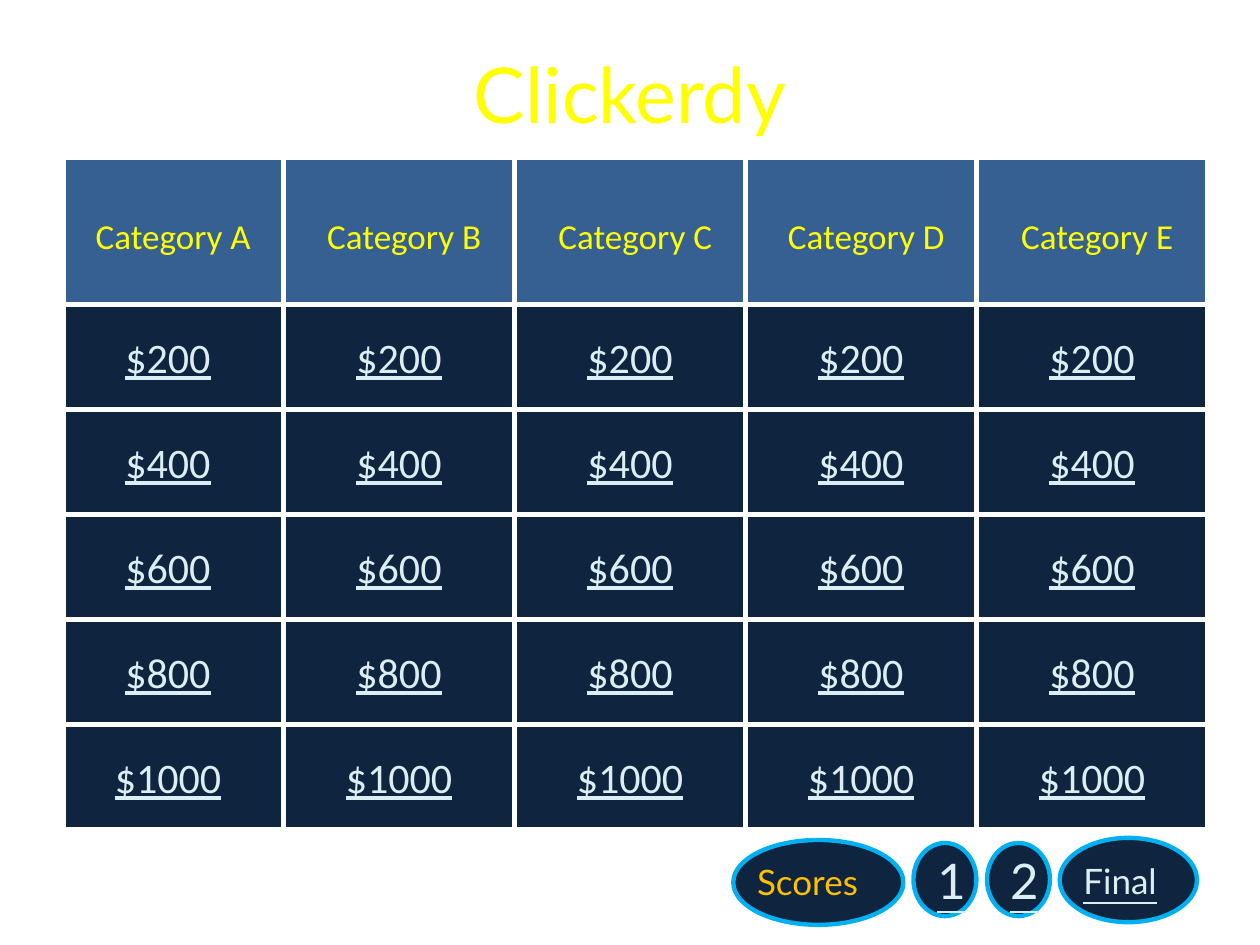
"""Build a quiz game board slide with five categories and score buttons."""
from lxml.etree import SubElement
from pptx import Presentation
from pptx.dml.color import RGBColor
from pptx.enum.shapes import MSO_CONNECTOR, MSO_SHAPE
from pptx.enum.text import MSO_ANCHOR, MSO_AUTO_SIZE, PP_ALIGN
from pptx.oxml.ns import qn
from pptx.util import Pt

NAVY, YELLOW, PALE, WHITE = "0F243E", "FFFF00", "DBEEF3", "FFFFFF"
LEFT, TOP, WIDTH, HEIGHT = 36, 90, 654, 384
HEADER, COL, ROW = 84, 132, 60


def add_text(text, x, y, w, h, size=20, font="Calibri", color=PALE,
             underline=None, align=PP_ALIGN.CENTER):
    sp = slide.shapes.add_textbox(Pt(x), Pt(y), Pt(w), Pt(h))
    tf = sp.text_frame
    tf.word_wrap = True
    tf.auto_size = MSO_AUTO_SIZE.SHAPE_TO_FIT_TEXT
    p = tf.paragraphs[0]
    p.alignment = align
    r = p.add_run()
    r.text = text
    r.font.size = Pt(size)
    r.font.name = font
    r.font.underline = underline
    r.font.color.rgb = rgb(color)


def rgb(color):
    return RGBColor.from_string(color)


prs = Presentation()
prs.slide_width, prs.slide_height = Pt(720), Pt(540)
slide = prs.slides.add_slide(prs.slide_layouts[5])
slide.background.fill.solid()
slide.background.fill.fore_color.rgb = rgb(WHITE)

title = slide.shapes.title
title.left, title.top, title.width, title.height = Pt(36), Pt(21.6), Pt(648), Pt(62.6)
title.text_frame.vertical_anchor = MSO_ANCHOR.MIDDLE
p = title.text_frame.paragraphs[0]
p.alignment = PP_ALIGN.CENTER
r = p.add_run()
r.text = "Clickerdy"
r.font.size = Pt(44)
r.font.name = "Lato"
r.font.color.rgb = rgb(YELLOW)

RECT, OVAL = MSO_SHAPE.RECTANGLE, MSO_SHAPE.OVAL
shapes = [
    (RECT, LEFT, TOP, WIDTH, HEADER, "376092", None, 0),
    (RECT, LEFT, TOP + HEADER, WIDTH, HEIGHT - HEADER, NAVY, None, 0),
    (RECT, LEFT, TOP, WIDTH, HEIGHT, None, WHITE, 3),
    (OVAL, 419, 480, 97.2, 48.5, NAVY, "00B0F0", 2.5),
    (OVAL, 522, 481.7, 36, 41.8, NAVY, "00B0F0", 2.5),
    (OVAL, 564, 481.7, 36, 41.8, NAVY, "00B0F0", 2.5),
    (OVAL, 605.5, 478.8, 78.5, 48.2, NAVY, "00B0F0", 2.5),
]
for kind, x, y, w, h, fill, line, weight in shapes:
    sp = slide.shapes.add_shape(kind, Pt(x), Pt(y), Pt(w), Pt(h))
    sp.shadow.inherit = False
    if fill:
        sp.fill.solid()
        sp.fill.fore_color.rgb = rgb(fill)
    else:
        sp.fill.background()
    if line:
        sp.line.color.rgb = rgb(line)
        sp.line.width = Pt(weight)
    else:
        sp.line.fill.background()

right, bottom = LEFT + WIDTH, TOP + HEIGHT
grid = [(x, TOP, x, bottom) for x in range(162, right - COL + 1, COL)]
grid += [(LEFT, y, right, y) for y in range(TOP + HEADER, bottom, ROW)]
for ends in grid:
    cxn = slide.shapes.add_connector(MSO_CONNECTOR.STRAIGHT, *map(Pt, ends))
    cxn.line.color.rgb = rgb(WHITE)
    cxn.line.width = Pt(3)
    SubElement(cxn._element.spPr, qn("a:effectLst"))

for i, letter in enumerate("ABCDE"):
    add_text(f"Category {letter}", 42 + i * COL, 119, 114, 31.5, color=YELLOW)
    for j in range(5):
        add_text(f"${200 * (j + 1)}", 48 + i * COL, 185.8 + j * ROW, 96, 36,
                 size=24, underline=True)

buttons = [
    ("Scores", 425.5, 488.2, 90, 31.5, 20, "FFC000", None),
    ("1", 528.5, 482.4, 29.5, 41, 28, PALE, True),
    ("2", 570.2, 482.4, 29.5, 41, 28, PALE, True),
    ("Final", 612, 487.4, 72, 31.5, 20, PALE, True),
]
for text, x, y, w, h, size, color, underline in buttons:
    add_text(text, x, y, w, h, size=size, font="Lato", color=color,
             underline=underline, align=PP_ALIGN.LEFT)

prs.save("out.pptx")
